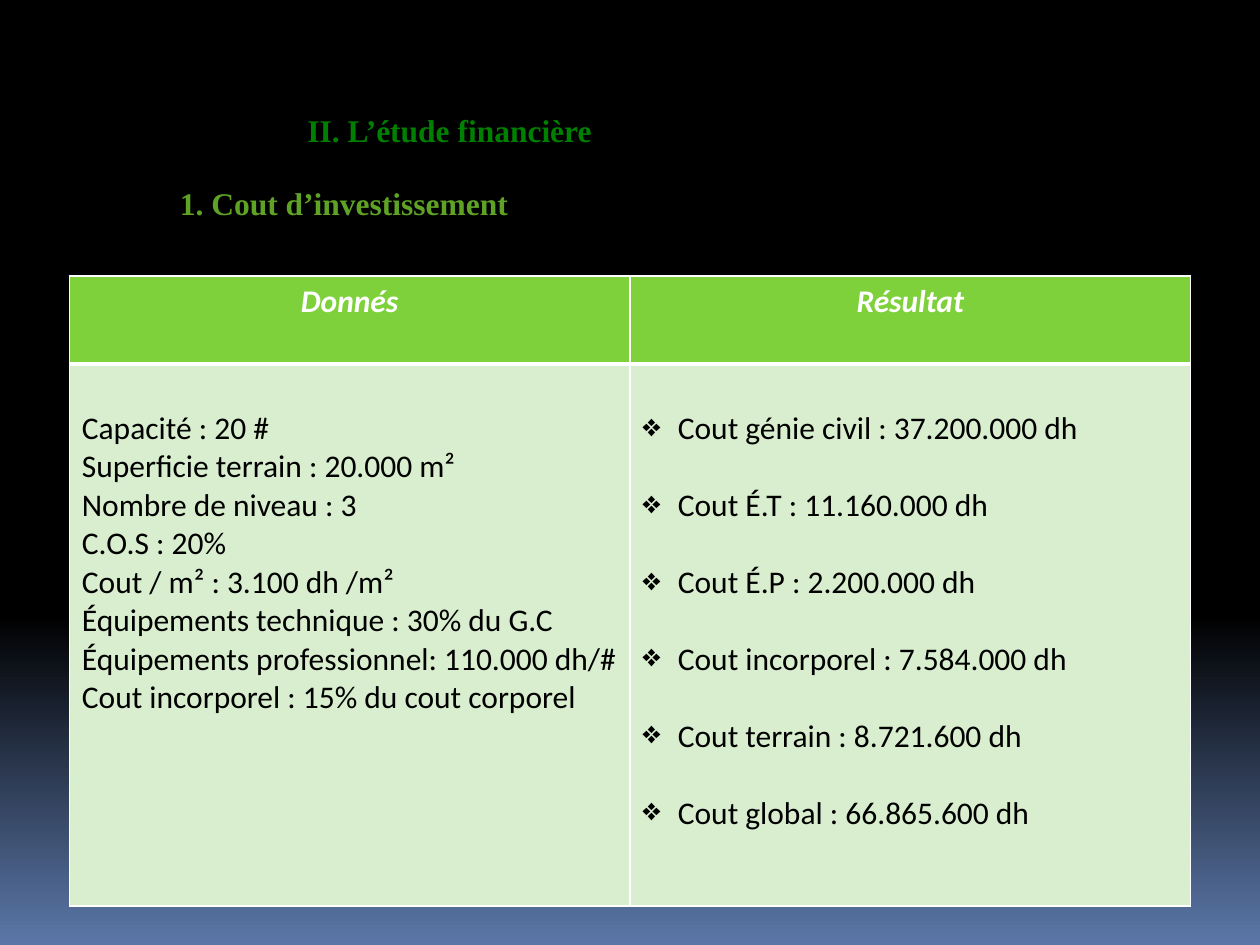
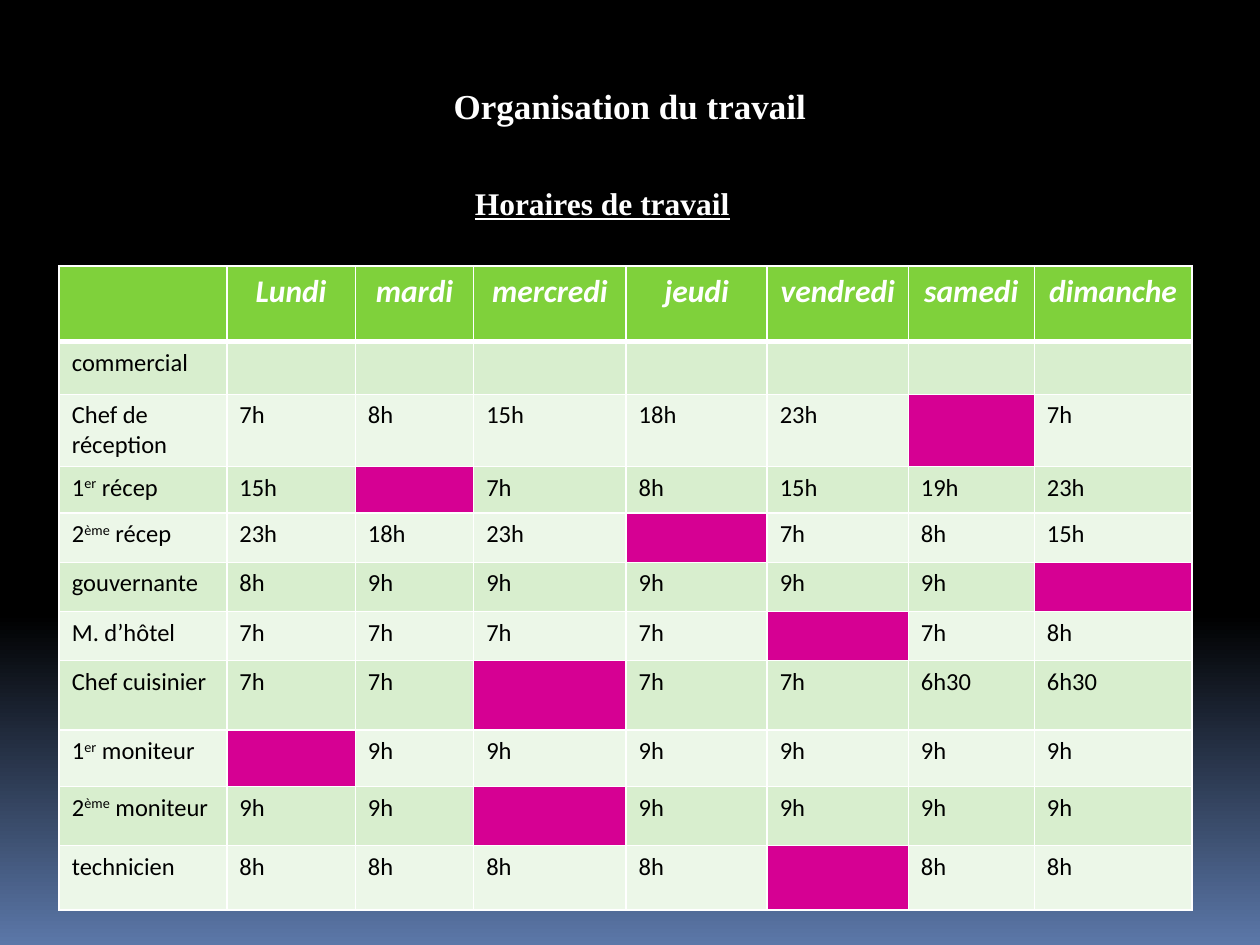
import copy

import pptx
import pptx.dml.color
import pptx.enum.text
import pptx.oxml
import pptx.oxml.ns
import pptx.util
from pptx.util import Inches, Pt

RGBColor = pptx.dml.color.RGBColor
PP_ALIGN = pptx.enum.text.PP_ALIGN
qn = pptx.oxml.ns.qn

BLACK = RGBColor(0x00, 0x00, 0x00)
WHITE = RGBColor(0xFF, 0xFF, 0xFF)
NIGHT_BLUE = RGBColor(0x5B, 0x77, 0xA8)
DARK_GREEN = RGBColor(0x00, 0x80, 0x00)
LEAF_GREEN = RGBColor(0x5F, 0xA3, 0x26)
HEADER_GREEN = RGBColor(0x7F, 0xD1, 0x3B)
BANDS = (RGBColor(0xD8, 0xEE, 0xCE), RGBColor(0xEC, 0xF7, 0xE8))
DAY_OFF_PINK = RGBColor(0xD6, 0x00, 0x93)

HEADING_FONT = "Times New Roman"
TABLE_FONT = "Calibri"
BULLET = "❖"
DAY_OFF = "-"

COST_DATA = [
    "Capacité : 20 #",
    "Superficie terrain : 20.000 m²",
    "Nombre de niveau : 3",
    "C.O.S : 20%",
    "Cout / m² : 3.100 dh /m²",
    "Équipements technique : 30% du G.C",
    "Équipements professionnel: 110.000 dh/#",
    "Cout incorporel : 15% du cout corporel",
]
COST_RESULTS = [
    "Cout génie civil : 37.200.000 dh",
    "Cout É.T : 11.160.000 dh",
    "Cout É.P : 2.200.000 dh",
    "Cout incorporel : 7.584.000 dh",
    "Cout terrain : 8.721.600 dh",
    "Cout global : 66.865.600 dh",
]

DAYS = ["Lundi", "mardi", "mercredi", "jeudi", "vendredi", "samedi", "dimanche"]
# Text between ^ marks is superscript; each row lists one start time per day
SCHEDULE = [
    ("commercial", ""),
    ("Chef de réception", "7h 8h 15h 18h 23h - 7h"),
    ("1^er^ récep", "15h - 7h 8h 15h 19h 23h"),
    ("2^ème^ récep", "23h 18h 23h - 7h 8h 15h"),
    ("gouvernante", "8h 9h 9h 9h 9h 9h -"),
    ("M. d’hôtel", "7h 7h 7h 7h - 7h 8h"),
    ("Chef cuisinier", "7h 7h - 7h 7h 6h30 6h30"),
    ("1^er^ moniteur", "- 9h 9h 9h 9h 9h 9h"),
    ("2^ème^ moniteur", "9h 9h - 9h 9h 9h 9h"),
    ("technicien", "8h 8h 8h 8h - 8h 8h"),
]
SCHEDULE_COLUMNS = [1.33, 1.02, 0.94, 1.21, 1.12, 1.12, 1, 1.25]
SCHEDULE_ROWS = [0.6, 0.42, 0.47, 0.37, 0.39, 0.39, 0.39, 0.55, 0.45, 0.47, 0.51]


def set_background(master):
    """Black down to 65 %, then fading to blue at the bottom."""
    fill = master.background.fill
    fill.gradient()
    fill.gradient_angle = 270
    stop_list = master.element.find(".//" + qn("a:gsLst"))
    stop_list.append(copy.deepcopy(stop_list[-1]))
    stops = zip(fill.gradient_stops, (0, 0.65, 1), (BLACK, BLACK, NIGHT_BLUE))
    for stop, position, color in stops:
        stop.position = position
        stop.color.rgb = color


def set_font(paragraph, name, size, color, bold=False, italic=False):
    font = paragraph.font
    font.name, font.size, font.bold, font.italic = name, Pt(size), bold, italic
    font.color.rgb = color


def write_heading(heading, text, size, color, align=PP_ALIGN.LEFT):
    frame = heading.text_frame
    frame.text = text
    frame.word_wrap = True
    frame.auto_size = pptx.enum.text.MSO_AUTO_SIZE.NONE
    frame.vertical_anchor = pptx.enum.text.MSO_ANCHOR.MIDDLE
    paragraph = frame.paragraphs[0]
    paragraph.alignment = align
    set_font(paragraph, HEADING_FONT, size, color, bold=True)
    return paragraph


def add_title(slide, text, place, size, color, align=PP_ALIGN.LEFT):
    title = slide.shapes.title
    title.left, title.top, title.width, title.height = map(Inches, place)
    write_heading(title, text, size, color, align)


def add_subtitle(slide, text, place, color):
    subtitle = slide.shapes.add_textbox(*map(Inches, place))
    return write_heading(subtitle, text, 18, color)


def add_grid(slide, left, top, columns, rows):
    """Table with the given column widths and row heights, without text."""
    grid = slide.shapes.add_table(
        len(rows), len(columns), Inches(left), Inches(top),
        Inches(sum(columns)), Inches(sum(rows))).table
    grid.horz_banding = False
    for column, width in zip(grid.columns, columns):
        column.width = Inches(width)
    for row, height in zip(grid.rows, rows):
        row.height = Inches(height)
    for index, row in enumerate(grid.rows):
        for cell in row.cells:
            set_borders(cell, 3 if index == 1 else 1, 3 if index == 0 else 1)
            cell.fill.solid()
            cell.fill.fore_color.rgb = BANDS[(index - 1) % 2] if index else HEADER_GREEN
    return grid


def set_borders(cell, top, bottom):
    properties = cell._tc.get_or_add_tcPr()
    for side, width in (("L", 1), ("R", 1), ("T", top), ("B", bottom)):
        properties.append(pptx.oxml.parse_xml(
            f'<a:ln{side} xmlns:a="{pptx.oxml.ns.namespaces("a")["a"]}" w="{Pt(width)}">'
            f'<a:solidFill><a:srgbClr val="{WHITE}"/></a:solidFill></a:ln{side}>'))


def write_header(grid, labels):
    for cell, label in zip(grid.rows[0].cells, labels):
        cell.text = label
        paragraph = cell.text_frame.paragraphs[0]
        paragraph.alignment = PP_ALIGN.CENTER
        set_font(paragraph, TABLE_FONT, 18, WHITE, bold=True, italic=True)


def write_list(cell, items, bullet=None, gap=0):
    cell.margin_top = Inches(0.36)
    cell.text = "\n".join(items)
    for index, paragraph in enumerate(cell.text_frame.paragraphs):
        if index and gap:
            paragraph.space_before = Pt(gap)
        if bullet:
            properties = paragraph._p.get_or_add_pPr()
            properties.set("marL", str(Inches(0.28)))
            properties.set("indent", str(-Inches(0.28)))
            properties.makeelement(qn("a:buChar"))
            pptx.oxml.ns  # namespace map used by qn
            mark = properties.makeelement(qn("a:buChar"), {"char": bullet})
            properties.append(mark)
        set_font(paragraph, TABLE_FONT, 18, BLACK)


def write_entry(cell, text):
    """One schedule entry; a day off is a pink cell without text."""
    paragraph = cell.text_frame.paragraphs[0]
    set_font(paragraph, TABLE_FONT, 14, BLACK)
    if text == DAY_OFF:
        cell.fill.fore_color.rgb = DAY_OFF_PINK
        text = ""
    if not text:
        paragraph._p.get_or_add_endParaRPr().set("sz", "1400")
        return
    for index, part in enumerate(text.split("^")):
        run = paragraph.add_run()
        run.text = part
        if index % 2:
            run.font._element.set("baseline", "30000")


def build_cost_slide(slide):
    add_title(slide, "II. L’étude financière", (2.34, 0.86, 2.6, 0.34), 18, DARK_GREEN)
    add_subtitle(slide, "1. Cout d’investissement", (1.33, 1.41, 3.2, 0.4), LEAF_GREEN)
    costs = add_grid(slide, 0.55, 2.19, [4.45, 4.45], [0.7, 4.3])
    write_header(costs, ["Donnés", "Résultat"])
    write_list(costs.cell(1, 0), COST_DATA)
    write_list(costs.cell(1, 1), COST_RESULTS, BULLET, gap=22)


def build_schedule_slide(slide):
    add_title(slide, "Organisation du travail", (3.28, 0.62, 3.44, 0.44), 20, WHITE,
              PP_ALIGN.CENTER)
    hours = add_subtitle(slide, "Horaires de travail", (3.67, 1.41, 2.45, 0.4), WHITE)
    hours.font.underline = True
    schedule = add_grid(slide, 0.47, 2.11, SCHEDULE_COLUMNS, SCHEDULE_ROWS)
    write_header(schedule, ["", *DAYS])
    for row, (post, times) in enumerate(SCHEDULE, start=1):
        entries = [post, *(times.split() or [""] * len(DAYS))]
        for column, entry in enumerate(entries):
            write_entry(schedule.cell(row, column), entry)


def main():
    prs = pptx.Presentation()
    prs.slide_width, prs.slide_height = Inches(10), Inches(7.5)
    set_background(prs.slide_master)
    title_only = prs.slide_layouts[5]
    for build in (build_cost_slide, build_schedule_slide):
        build(prs.slides.add_slide(title_only))
    prs.save("out.pptx")


if __name__ == "__main__":
    main()
